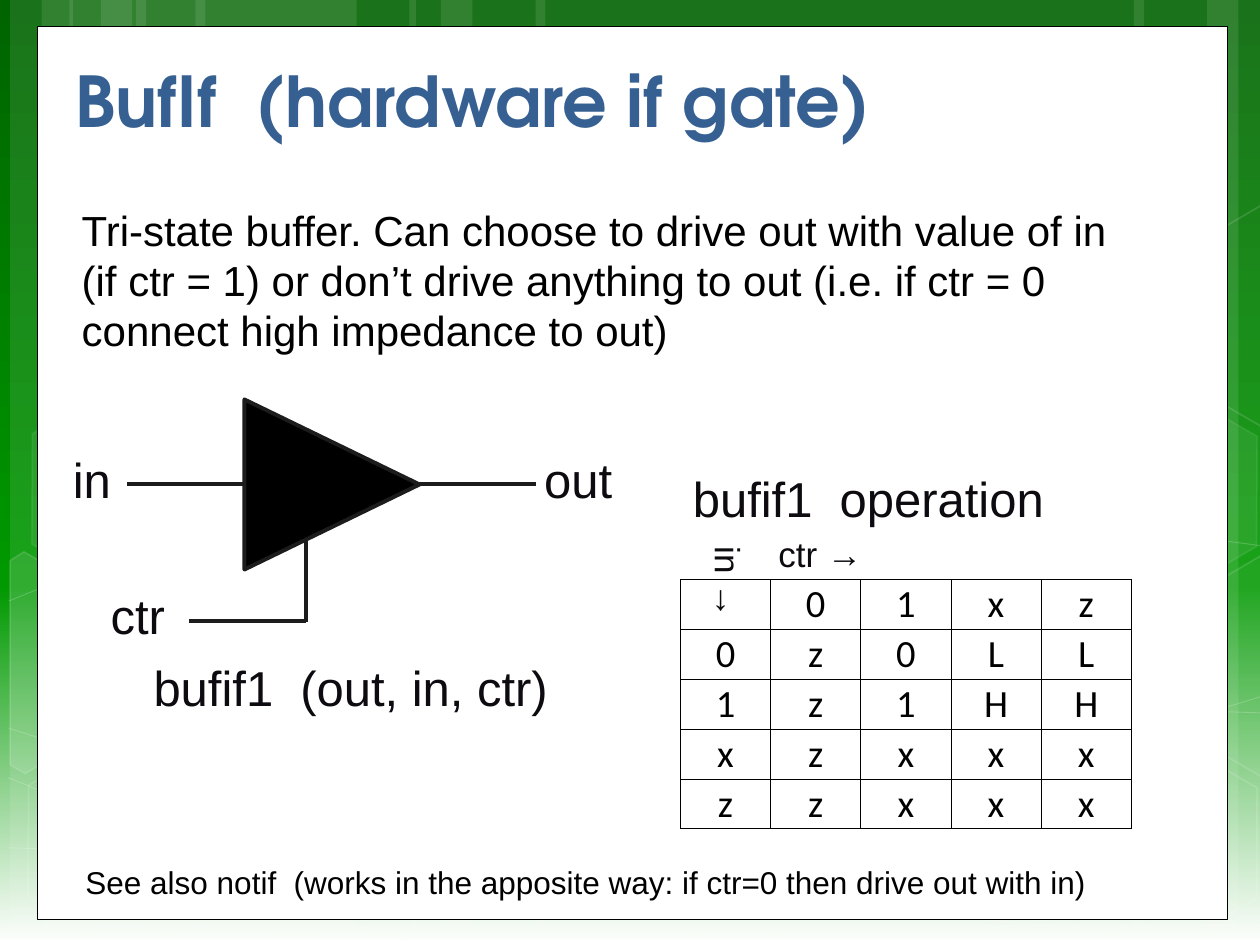
from copy import deepcopy

from lxml.etree import SubElement
from pptx import Presentation
from pptx.dml.color import RGBColor
from pptx.enum.shapes import MSO_CONNECTOR as Connector, MSO_SHAPE as Shape
from pptx.enum.text import MSO_ANCHOR as Anchor, PP_ALIGN as Align
from pptx.oxml.ns import qn
from pptx.util import Inches, Pt

WHITE, BLACK, WIRE, LABEL = "FFFFFF", "000000", "1C1C1C", "0D0A10"

# Background bands: left, width
BANDS = [(1.08, 1.75), (0.08, 0.5), (0.33, 0.83), (1.55, 1.75), (0.55, 0.5), (0.8, 0.83),
         (7.33, 1.75), (9.58, 0.5), (9, 0.83), (4.25, 3.08), (3.25, 0.5), (3.5, 0.83)]

# Faint sweeping lines
SWEEPS = [
    [(0.07, 6.73), (1.9, 6.78), (4.58, 6.65), (7.92, 6.17), (10.07, 5.51)],
    [(0.07, 4.77), (1.21, 4.31), (3.47, 3.87), (6.54, 3.87), (10.07, 4.34)],
    [(0.06, 6.17), (3.34, 7.49)],
    [(0.07, 5.78), (1.28, 6.16), (3.57, 6.73), (6.28, 7.18), (8.53, 7.36), (10.07, 7.34)],
    [(2.42, 7.49), (3.02, 6.91), (4.7, 6.09), (6.8, 5.69), (8.86, 5.62), (10.06, 5.66)],
]

# Hexagons: left, top, fill opacity, line opacity
HEXAGONS = [(4.97, 5.89, 6, 12), (0.11, 5.91, 0, 12), (0.14, 3.12, 7, 8),
            (1.74, 5.92, 0, 12), (8.34, 5.93, 0, 12), (8.34, 3.14, 7, 8)]

# Hexagons cut off by the slide edge: points, fill opacity
CUT_HEXAGONS = [
    ([(0.08, 4.45), (0.19, 4.38), (0.96, 4.82), (0.95, 5.7), (0.2, 6.14), (0.08, 6.07)], 10),
    ([(9.26, 4.85), (10.01, 4.41), (10.09, 4.46), (10.09, 6.13), (10.02, 6.17), (9.26, 5.73)], 4),
    ([(9.26, 2.07), (10.01, 1.63), (10.1, 1.68), (10.09, 3.35), (10.02, 3.39), (9.26, 2.95)], 0),
]

# Rows are values of in, columns are values of ctr
TRUTH_TABLE = [" 01xz".strip().rjust(5), "0z0LL", "1z1HH", "xzxxx", "zzxxx"]

# Wires: x and y of start, x and y of end
WIRES = [(1.01, 3.84, 1.94, 3.84), (3.32, 3.84, 4.25, 3.84),
         (1.5, 4.93, 2.43, 4.93), (2.43, 4.94, 2.43, 4.12)]

# Diagram labels: text, left, top, width, height, size, rotation
LABELS = [
    ("in", 0.48, 3.52, 0.77, 0.57, 28, 0),
    ("out", 4.22, 3.52, 0.85, 0.57, 28, 0),
    ("ctr", 0.78, 4.6, 0.77, 0.57, 28, 0),
    ("bufif1  (out, in, ctr)", 1.12, 5.17, 3.42, 0.57, 28, 0),
    ("bufif1  operation", 5.4, 3.67, 3.42, 0.57, 28, 0),
    ("ctr →", 6.08, 4.18, 1.45, 0.44, 20, 0),
    ("in →", 5.25, 4.55, 1.06, 0.44, 20, 90),
]


def rgb(color):
    return RGBColor.from_string(color)


def set_opacity(fill_parent, percent):
    color = fill_parent.find(qn("a:solidFill"))[0]
    SubElement(color, qn("a:alpha")).set("val", str(percent * 1000))


def style_shape(shape, fill=None, fill_opacity=100, line=None, line_width=1, line_opacity=100):
    shape.shadow.inherit = False
    properties = shape._element.spPr
    if fill and fill_opacity:
        shape.fill.solid()
        shape.fill.fore_color.rgb = rgb(fill)
        if fill_opacity < 100:
            set_opacity(properties, fill_opacity)
    else:
        shape.fill.background()
    if line:
        shape.line.color.rgb = rgb(line)
        shape.line.width = Pt(line_width)
        if line_opacity < 100:
            set_opacity(properties.find(qn("a:ln")), line_opacity)
    else:
        shape.line.fill.background()


def add_preset(slide, kind, left, top, width, height, rotation=0, **style):
    shape = slide.shapes.add_shape(kind, Inches(left), Inches(top), Inches(width), Inches(height))
    shape.rotation = rotation
    style_shape(shape, **style)
    return shape


def add_outline(slide, points, close, **style):
    corners = [(Inches(x), Inches(y)) for x, y in points]
    builder = slide.shapes.build_freeform(*corners[0], scale=1.0)
    builder.add_line_segments(corners[1:], close=close)
    style_shape(builder.convert_to_shape(), **style)


def add_wire(slide, x1, y1, x2, y2):
    wire = slide.shapes.add_connector(
        Connector.STRAIGHT, Inches(x1), Inches(y1), Inches(x2), Inches(y2))
    wire.line.color.rgb = rgb(WIRE)
    wire.line.width = Pt(2.25)
    SubElement(wire._element.spPr, qn("a:effectLst"))


def format_text(paragraph, size, font, color, bold=False):
    for run in paragraph.runs:
        run.font.size = Pt(size)
        run.font.name = font
        run.font.bold = bold
        run.font.color.rgb = rgb(color)


def add_text(slide, text, left, top, width, height, size, rotation=0, color=BLACK,
             font="Arial", bold=False, anchor=Anchor.TOP, wrap=True):
    box = slide.shapes.add_textbox(Inches(left), Inches(top), Inches(width), Inches(height))
    box.rotation = rotation
    text_frame = box.text_frame
    text_frame.word_wrap = wrap
    text_frame.vertical_anchor = anchor
    text_frame.text = text
    format_text(text_frame.paragraphs[0], size, font, color, bold)


def style_cell(cell, text):
    cell.margin_left = cell.margin_right = cell.margin_top = cell.margin_bottom = 0
    cell.vertical_anchor = Anchor.MIDDLE
    properties = cell._tc.get_or_add_tcPr()
    for side in ("lnL", "lnR", "lnT", "lnB"):
        border = SubElement(properties, qn(f"a:{side}"), w=str(Pt(0.5)))
        fill = SubElement(border, qn("a:solidFill"))
        SubElement(fill, qn("a:srgbClr"), val=BLACK)
    cell.fill.background()
    if text.strip():
        cell.text_frame.text = text
        paragraph = cell.text_frame.paragraphs[0]
        paragraph.alignment = Align.CENTER
        format_text(paragraph, 22, "Calibri", BLACK)


def add_truth_table(slide):
    table = slide.shapes.add_table(
        5, 5, Inches(5.4), Inches(4.6), Inches(3.58), Inches(1.98)).table
    table.first_row = table.horz_banding = False
    for row, values in enumerate(TRUTH_TABLE):
        for column, value in enumerate(values):
            style_cell(table.cell(row, column), value)


def add_background(slide):
    fill = slide.background.fill
    fill.gradient()
    fill.gradient_angle = 270
    stop_list = next(slide.element.iter(qn("a:gsLst")))
    stop_list.append(deepcopy(stop_list[-1]))
    stops = [(0, "006400"), (0.62, "009900"), (1, WHITE)]
    for stop, (position, color) in zip(fill.gradient_stops, stops):
        stop.position = position
        stop.color.rgb = rgb(color)

    for left, width in BANDS:
        add_preset(slide, Shape.RECTANGLE, left, 0, width, 7.5, fill=WHITE, fill_opacity=10)
    for points in SWEEPS:
        add_outline(slide, points, False, line=WHITE, line_width=0.5, line_opacity=20)
    for left, top, fill_opacity, line_opacity in HEXAGONS:
        hexagon = add_preset(slide, Shape.HEXAGON, left, top, 1.75, 1.52, 30, fill=WHITE,
                             fill_opacity=fill_opacity, line=WHITE, line_opacity=line_opacity)
        hexagon.adjustments[0] = 0.285
    for points, fill_opacity in CUT_HEXAGONS:
        add_outline(slide, points, True, fill=WHITE, fill_opacity=fill_opacity,
                    line=WHITE, line_opacity=12)
    # White content panel
    add_preset(slide, Shape.RECTANGLE, 0.3, 0.21, 9.44, 7.09,
               fill=WHITE, line=BLACK, line_width=0.5)


def main():
    presentation = Presentation()
    presentation.slide_width, presentation.slide_height = Inches(10), Inches(7.5)
    slide = presentation.slides.add_slide(presentation.slide_layouts[6])
    add_background(slide)

    # Title
    add_text(slide, "BufIf  (hardware if gate)", 0.5, 0.12, 9.17, 1.05, 40, color="376092",
             font="TeX Gyre Adventor", bold=True, anchor=Anchor.BOTTOM)

    # Buffer symbol and truth table
    for wire in WIRES:
        add_wire(slide, *wire)
    add_preset(slide, Shape.ISOSCELES_TRIANGLE, 1.96, 3.15, 1.35, 1.39, 90,
               fill=BLACK, line=WIRE, line_width=2.25)
    add_truth_table(slide)
    for label in LABELS:
        add_text(slide, *label, color=LABEL)

    # Explanations
    add_text(slide, "Tri-state buffer. Can choose to drive out with value of in (if ctr = 1) "
             "or don’t drive anything to out (i.e. if ctr = 0 connect high impedance to out)",
             0.55, 1.57, 8.62, 1.31, 24)
    add_text(slide, "See also notif  (works in the apposite way: if ctr=0 then drive out with in)",
             0.58, 6.8, 8.22, 0.4, 18, wrap=False)
    presentation.save("out.pptx")


if __name__ == "__main__":
    main()
